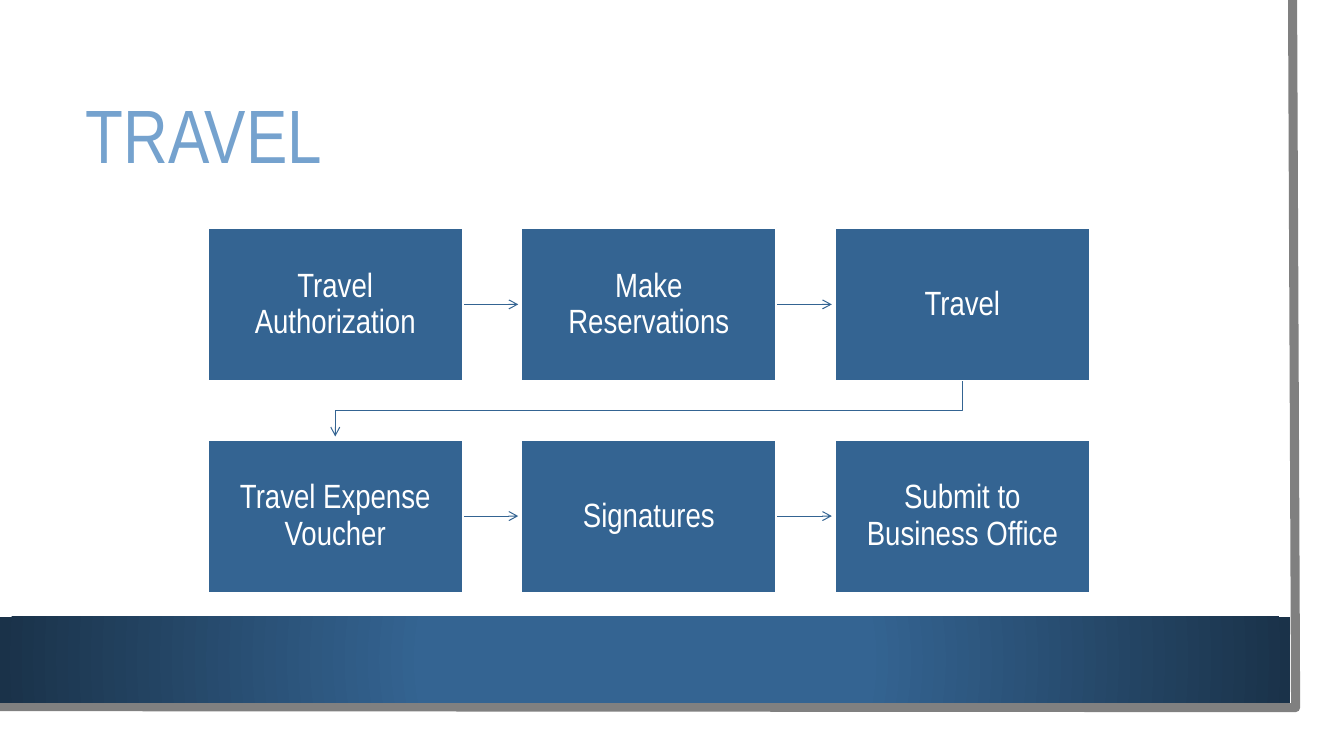
from dataclasses import dataclass

import lxml.etree
import pptx
import pptx.dml.color
import pptx.enum.shapes
import pptx.enum.text
import pptx.oxml
import pptx.oxml.ns
import pptx.util

Inches = pptx.util.Inches
Pt = pptx.util.Pt
qn = pptx.oxml.ns.qn

FONT = "Arial Narrow"
BLUE, NAVY, LIGHT_BLUE = "346492", "1A3249", "75A2CE"
WHITE, GRAY = "FFFFFF", "808080"

# Grid of process steps
LEFT, TOP = 2.06, 2.26
BOX_W, BOX_H = 2.53, 1.52
STEP_X, STEP_Y = 3.11, 2.1
COLUMNS = 3
ARROW_LENGTH = 0.55


@dataclass
class Step:
    text: str
    row: int
    col: int

    @property
    def x(self) -> float:
        return LEFT + self.col * STEP_X

    @property
    def y(self) -> float:
        return TOP + self.row * STEP_Y


LABELS = ["Travel Authorization", "Make Reservations", "Travel",
          "Travel Expense Voucher", "Signatures", "Submit to Business Office"]
STEPS = [Step(text, *divmod(i, COLUMNS)) for i, text in enumerate(LABELS)]


def rgb(color: str) -> pptx.dml.color.RGBColor:
    return pptx.dml.color.RGBColor.from_string(color)


def style_line(sp, color: str, width: float, arrow: bool = False) -> None:
    sp.line.color.rgb = rgb(color)
    sp.line.width = Pt(width)
    if arrow:
        ln = sp.line._get_or_add_ln()
        lxml.etree.SubElement(ln, qn("a:tailEnd"), type="arrow")


def add_rect(shapes, x: float, y: float, w: float, h: float, fill: str):
    sp = shapes.add_shape(pptx.enum.shapes.MSO_SHAPE.RECTANGLE,
                          Inches(x), Inches(y), Inches(w), Inches(h))
    sp.shadow.inherit = False
    sp.fill.solid()
    sp.fill.fore_color.rgb = rgb(fill)
    sp.line.fill.background()
    return sp


def add_path(shapes, points: list[tuple[float, float]], color: str,
             width: float, arrow: bool = False) -> None:
    pts = [(Inches(x), Inches(y)) for x, y in points]
    builder = shapes.build_freeform(*pts[0])
    builder.add_line_segments(pts[1:], close=False)
    sp = builder.convert_to_shape()
    sp.shadow.inherit = False
    sp.fill.background()
    style_line(sp, color, width, arrow)


def add_arrow(shapes, x: float, y: float) -> None:
    cxn = shapes.add_connector(
        pptx.enum.shapes.MSO_CONNECTOR.STRAIGHT,
        Inches(x), Inches(y), Inches(x + ARROW_LENGTH), Inches(y))
    lxml.etree.SubElement(cxn._element.spPr, qn("a:effectLst"))
    style_line(cxn, BLUE, 0.75, arrow=True)


def write(sp, text: str, size: float, color: str,
          align: pptx.enum.text.PP_ALIGN) -> None:
    tf = sp.text_frame
    tf.word_wrap = True
    tf.vertical_anchor = pptx.enum.text.MSO_ANCHOR.MIDDLE
    p = tf.paragraphs[0]
    p.text = text
    p.alignment = align
    p.line_spacing = 0.9
    p.font.name = FONT
    p.font.size = Pt(size)
    p.font.color.rgb = rgb(color)


def add_band(shapes) -> None:
    sp = add_rect(shapes, 0, 6.12, 12.8, 0.85, BLUE)
    grad = pptx.oxml.parse_xml(
        f'<a:gradFill {pptx.oxml.ns.nsdecls("a")} rotWithShape="1"><a:gsLst>'
        f'<a:gs pos="34000"><a:srgbClr val="{BLUE}"/></a:gs>'
        f'<a:gs pos="100000"><a:srgbClr val="{NAVY}"/></a:gs></a:gsLst>'
        '<a:path path="circle"><a:fillToRect l="50000" t="50000" '
        'r="50000" b="50000"/></a:path></a:gradFill>')
    spPr = sp._element.spPr
    spPr.replace(spPr.find(qn("a:solidFill")), grad)


def add_step(shapes, step: Step) -> None:
    sp = add_rect(shapes, step.x, step.y, BOX_W, BOX_H, BLUE)
    style_line(sp, WHITE, 1.5)
    tf = sp.text_frame
    tf.margin_left = tf.margin_right = Inches(0.19)
    tf.margin_top = tf.margin_bottom = Inches(0.19)
    write(sp, step.text, 24, WHITE, pptx.enum.text.PP_ALIGN.CENTER)


def main() -> None:
    prs = pptx.Presentation()
    prs.slide_width, prs.slide_height = Inches(13.33), Inches(7.5)
    shapes = prs.slides.add_slide(prs.slide_layouts[6]).shapes

    # Page frame and bottom band
    add_path(shapes, [(12.82, 0), (12.85, 7.02), (0, 7.01)], GRAY, 6.5)
    add_band(shapes)

    # Title
    title = shapes.add_textbox(Inches(0.75), Inches(0.75),
                               Inches(11.37), Inches(1.26))
    write(title, "TRAVEL", 54, LIGHT_BLUE, pptx.enum.text.PP_ALIGN.LEFT)

    # Steps, with an arrow to the next one in the row
    for step in STEPS:
        if step.col < COLUMNS - 1:
            add_arrow(shapes, step.x + BOX_W, step.y + BOX_H / 2)
        add_step(shapes, step)

    # Turn from the end of the first row to the start of the second
    end, start = STEPS[COLUMNS - 1], STEPS[COLUMNS]
    x1, x2 = end.x + BOX_W / 2, start.x + BOX_W / 2
    y1 = end.y + BOX_H
    add_path(shapes, [(x1, y1), (x1, y1 + 0.29), (x2, y1 + 0.29),
                      (x2, y1 + ARROW_LENGTH)], BLUE, 0.75, arrow=True)

    prs.save("out.pptx")


if __name__ == "__main__":
    main()
